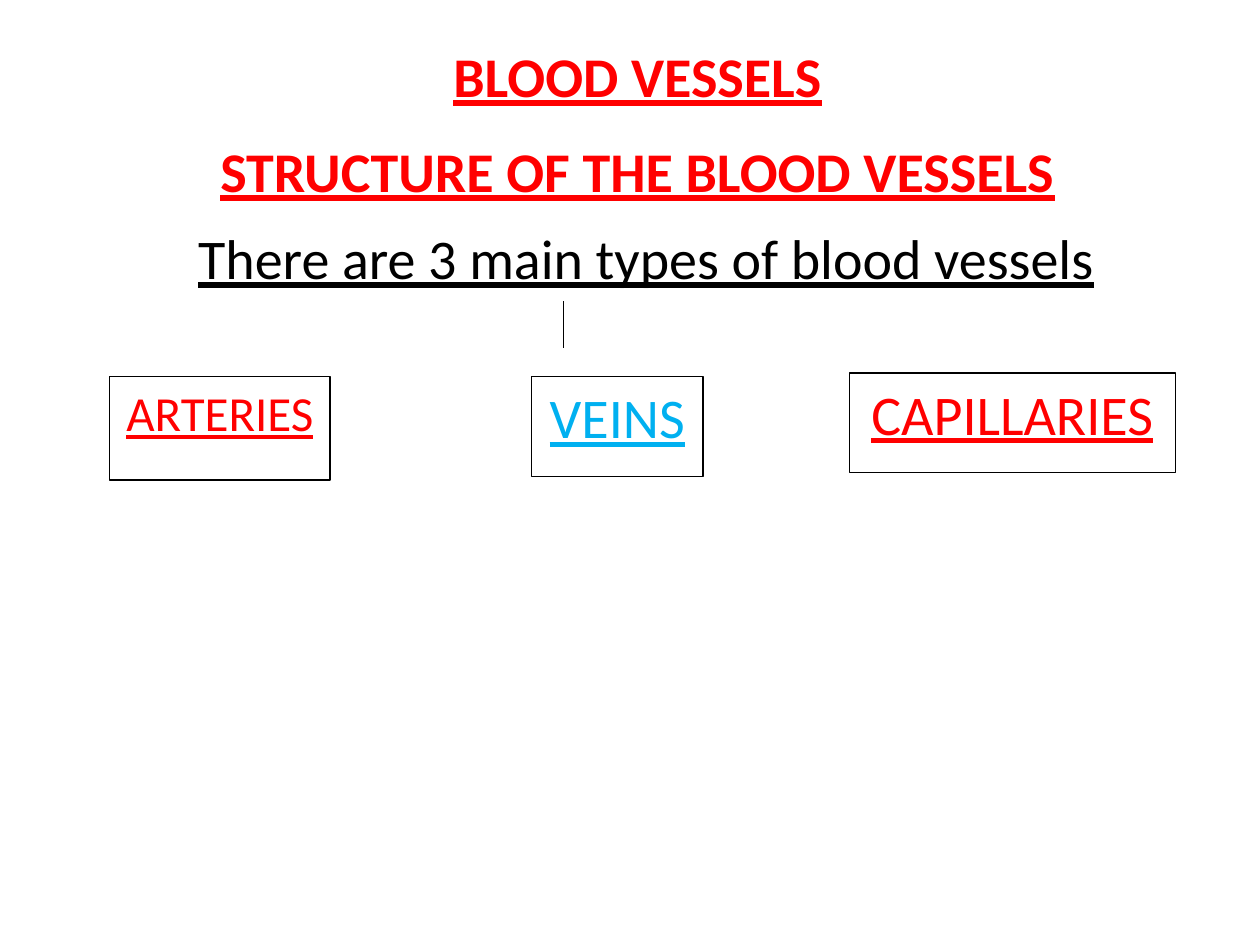
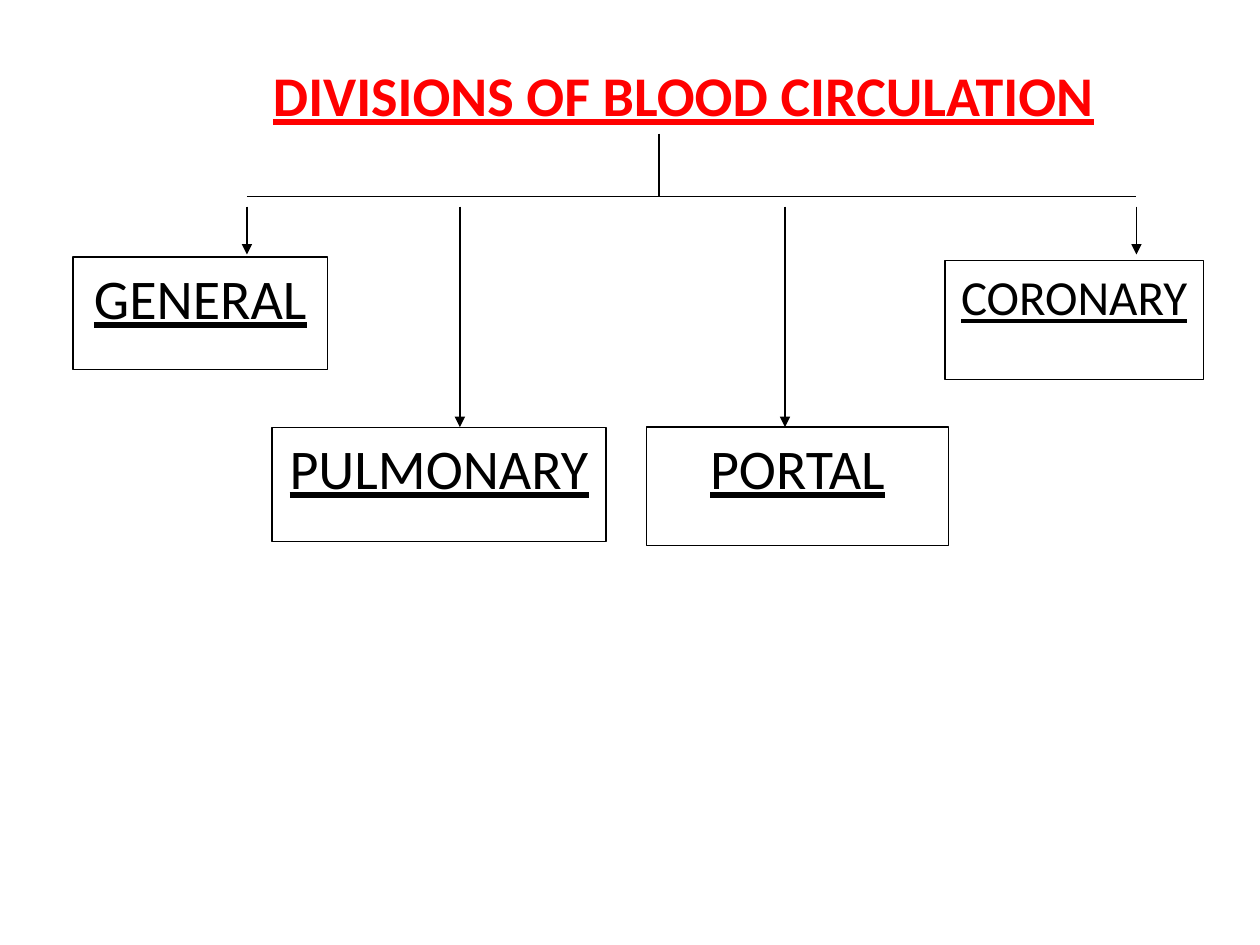
from typing import NamedTuple

from lxml.etree import SubElement
from pptx import Presentation
from pptx.dml.color import RGBColor
from pptx.enum.shapes import MSO_CONNECTOR as CONN, MSO_SHAPE as SHAPE
from pptx.enum.text import MSO_ANCHOR as ANCHOR, PP_ALIGN as ALIGN
from pptx.oxml.ns import qn
from pptx.util import Inches, Pt

# Shared style
RED = RGBColor(0xFF, 0x00, 0x00)
BLUE = RGBColor(0x00, 0xB0, 0xF0)
BLACK = RGBColor(0x00, 0x00, 0x00)
WHITE = RGBColor(0xFF, 0xFF, 0xFF)
FONT = "Calibri"
LINE_W = Pt(0.75)

# Grid of square cells covering the slide
COLS, ROWS = 100, 75
CELL = Inches(10) // COLS


class Area(NamedTuple):
    col: float
    row: float
    cols: float
    rows: float


class Label(NamedTuple):
    text: str
    area: Area
    color: RGBColor = BLACK
    size: int = 32


class Rule(NamedTuple):
    col1: float
    row1: float
    col2: float
    row2: float
    arrow: bool = False


def grid(*cells: float) -> list[int]:
    return [round(c * CELL) for c in cells]


def add_line(p, text: str, color: RGBColor, size: int = 32, bold: bool = False) -> None:
    """Centred, underlined line of text."""
    p.alignment = ALIGN.CENTER
    r = p.add_run()
    r.text = text
    f = r.font
    f.name, f.size, f.bold, f.underline = FONT, Pt(size), bold, True
    f.color.rgb = color


def add_heading(slide, lines: list[str], area: Area, color: RGBColor = RED,
                bold: bool = True, wrap: bool = True):
    tf = slide.shapes.add_textbox(*grid(*area)).text_frame
    tf.word_wrap = wrap
    for i, text in enumerate(lines):
        p = tf.add_paragraph() if i else tf.paragraphs[0]
        add_line(p, text, color, bold=bold)
    return tf


def add_box(slide, label: Label) -> None:
    sp = slide.shapes.add_shape(SHAPE.RECTANGLE, *grid(*label.area))
    sp.shadow.inherit = False
    sp.fill.solid()
    sp.fill.fore_color.rgb = WHITE
    sp.line.color.rgb = BLACK
    sp.line.width = LINE_W
    tf = sp.text_frame
    tf.word_wrap = True
    tf.vertical_anchor = ANCHOR.TOP
    add_line(tf.paragraphs[0], label.text, label.color, label.size)


def add_rule(slide, rule: Rule) -> None:
    cx = slide.shapes.add_connector(CONN.STRAIGHT, *grid(*rule[:4]))
    cx.line.color.rgb = BLACK
    cx.line.width = LINE_W
    if rule.arrow:
        SubElement(cx.line._get_or_add_ln(), qn("a:tailEnd"), type="triangle")
    SubElement(cx._element.spPr, qn("a:effectLst"))


def build_vessels(slide) -> None:
    tf = add_heading(slide, ["BLOOD VESSELS", "STRUCTURE OF THE BLOOD VESSELS"],
                     Area(4.7, 2, 91.8, 14.8))
    for p in tf.paragraphs:
        p.line_spacing = 1.15
        p.space_after = Pt(10)
    tf = add_heading(slide, ["There are 3 main types of blood vessels"],
                     Area(10.6, 17.2, 81.4, 6.4), BLACK, bold=False)
    tf.vertical_anchor = ANCHOR.MIDDLE
    add_rule(slide, Rule(44.7, 23.9, 44.7, 27.6))
    for label in (
        Label("ARTERIES", Area(8.7, 29.9, 17.5, 8.2), RED, 28),
        Label("VEINS", Area(42.2, 29.9, 13.6, 7.9), BLUE),
        Label("CAPILLARIES", Area(67.4, 29.6, 25.9, 7.9), RED),
    ):
        add_box(slide, label)


def build_divisions(slide) -> None:
    # Trunk, crossbar and arrows to the upper and lower boxes
    left, right, bar, start = 19.6, 90.2, 15.6, 16.4
    upper, lower = 20.2, 33.9
    add_rule(slide, Rule(52.3, 10.6, 52.3, bar))
    add_rule(slide, Rule(left, bar, right, bar))
    for col, end in ((left, upper), (36.5, lower), (62.3, lower), (right, upper)):
        add_rule(slide, Rule(col, start, col, end, arrow=True))
    for label in (
        Label("GENERAL", Area(5.8, 20.4, 20.2, 8.9)),
        Label("PULMONARY", Area(21.6, lower, 26.5, 9.1)),
        Label("PORTAL", Area(51.3, lower, 24, 9.4)),
        Label("CORONARY", Area(75, 20.7, 20.5, 9.4), size=28),
    ):
        add_box(slide, label)
    add_heading(slide, ["DIVISIONS OF BLOOD CIRCULATION"],
                Area(20.4, 4.3, 67.7, 9.4), wrap=False)


def main() -> None:
    prs = Presentation()
    prs.slide_width, prs.slide_height = COLS * CELL, ROWS * CELL
    for build in (build_vessels, build_divisions):
        build(prs.slides.add_slide(prs.slide_layouts[6]))
    prs.save("out.pptx")


if __name__ == "__main__":
    main()
